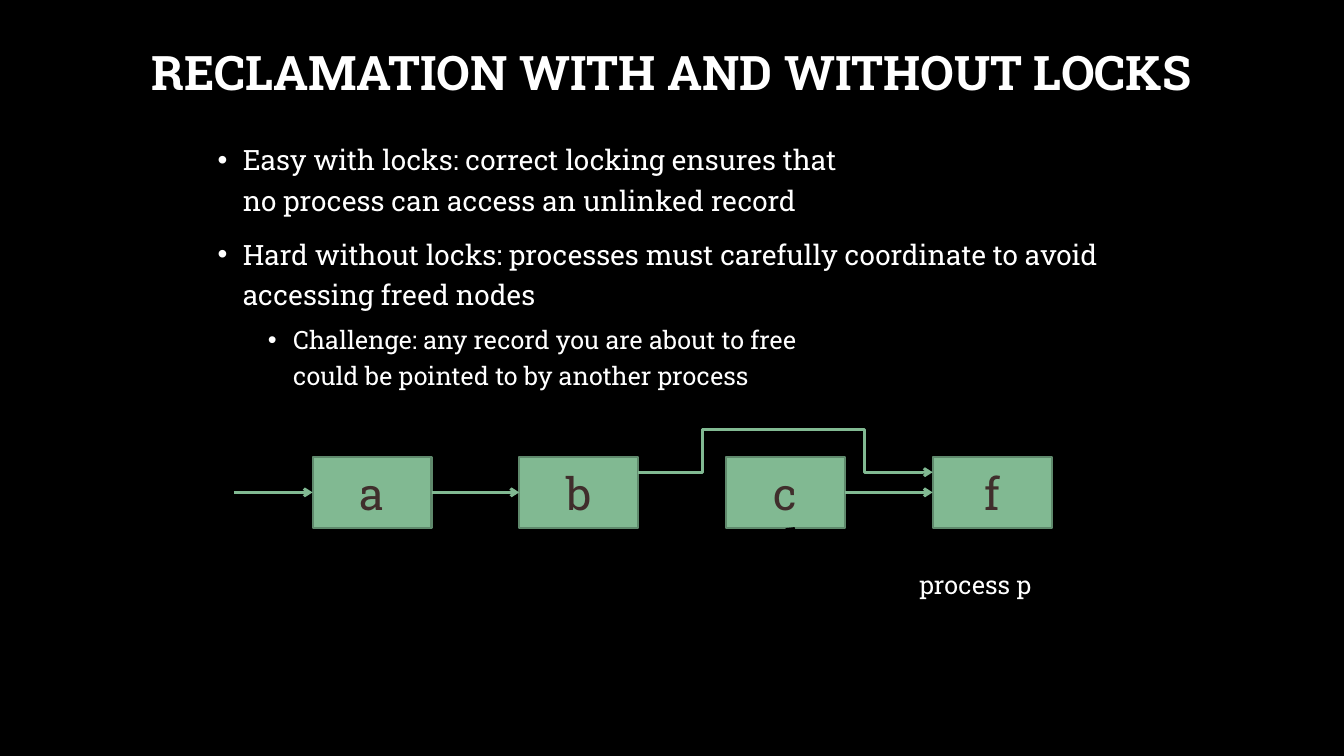
from dataclasses import dataclass

from lxml.etree import SubElement
from pptx import Presentation
from pptx.dml.color import RGBColor
from pptx.enum.shapes import MSO_CONNECTOR, MSO_SHAPE
from pptx.enum.text import MSO_ANCHOR, PP_ALIGN
from pptx.oxml.ns import qn
from pptx.util import Inches, Pt


@dataclass(frozen=True)
class Theme:
    font: str = "Roboto Slab"
    background: RGBColor = RGBColor(0x00, 0x00, 0x00)
    text: RGBColor = RGBColor(0xFF, 0xFF, 0xFF)
    node_text: RGBColor = RGBColor(0x40, 0x2E, 0x2C)
    node_fill: RGBColor = RGBColor(0x81, 0xB9, 0x92)
    node_line: RGBColor = RGBColor(0x5F, 0x89, 0x6C)
    title_size: int = 34
    node_size: int = 32
    body_size: int = 20
    small_size: int = 18


THEME = Theme()
LEFT_SITE, BOTTOM_SITE, RIGHT_SITE = 1, 2, 3

TITLE = "RECLAMATION WITH AND WITHOUT LOCKS"
# Level and wording; \v is a line break
BULLETS = [
    (0, "Easy with locks: correct locking ensures that\v"
        "no process can access an unlinked record"),
    (0, "Hard without locks: processes must carefully coordinate to avoid "
        "accessing freed nodes"),
    (1, "Challenge: any record you are about to free\v"
        "could be pointed to by another process"),
]


def set_all(target, values):
    for name, value in values.items():
        setattr(target, name, value)


def write(para, text, size, color=THEME.text, bold=False, **layout):
    para.text = text
    set_all(para, layout)
    for span in para.runs:
        set_all(span.font, {"name": THEME.font, "size": Pt(size), "bold": bold})
        span.font.color.rgb = color


def add_text(page, box, **frame_format):
    frame = page.shapes.add_textbox(*map(Inches, box)).text_frame
    set_all(frame, {"word_wrap": True, **frame_format})
    return frame


def add_bullet(para, level):
    properties = para._p.get_or_add_pPr()
    properties.set("marL", str(Inches(0.25 + 0.5 * level)))
    properties.set("indent", str(Inches(-0.25)))
    SubElement(properties, qn("a:buFont"), typeface="Arial")
    SubElement(properties, qn("a:buChar"), char="•")


def add_link(page, start, end, color=THEME.node_fill, head=True, bend=None):
    kind = MSO_CONNECTOR.ELBOW if bend else MSO_CONNECTOR.STRAIGHT
    link = page.shapes.add_connector(kind, *map(Inches, (*start, *end)))
    link.line.color.rgb = color
    link.line.width = Pt(2)
    if head:
        SubElement(link.line._get_or_add_ln(), qn("a:tailEnd"), type="arrow")
    properties = link._element.spPr
    SubElement(properties, qn("a:effectLst"))
    if bend:
        guides = properties.find(qn("a:prstGeom")).get_or_add_avLst()
        SubElement(guides, qn("a:gd"), name="adj1",
                   fmla=f"val {round(bend * 100000)}")
    return link


def add_node(page, box, name):
    node = page.shapes.add_shape(MSO_SHAPE.RECTANGLE, *map(Inches, box))
    node.shadow.inherit = False
    node.fill.solid()
    node.fill.fore_color.rgb = THEME.node_fill
    node.line.color.rgb = THEME.node_line
    node.line.width = Pt(1.5)
    node.text_frame.vertical_anchor = MSO_ANCHOR.MIDDLE
    write(node.text_frame.paragraphs[0], name, THEME.node_size,
          THEME.node_text, alignment=PP_ALIGN.CENTER)
    return node


def add_title(page, box):
    frame = add_text(page, box, vertical_anchor=MSO_ANCHOR.MIDDLE)
    write(frame.paragraphs[0], TITLE, THEME.title_size, bold=True,
          alignment=PP_ALIGN.CENTER, line_spacing=0.9)


def add_body(page, box):
    frame = add_text(page, box)
    for index, (level, text) in enumerate(BULLETS):
        para = frame.add_paragraph() if index else frame.paragraphs[0]
        write(para, text, THEME.small_size if level else THEME.body_size,
              level=level, line_spacing=1.2, space_before=Pt(5 if level else 10))
        add_bullet(para, level)


def add_linked_list(page, box):
    left, top, width, height = box
    node_width, node_height = 1.18, 0.71
    names = "abcf"
    pitch = (width - node_width) / (len(names) - 1)
    lefts = {name: left + index * pitch for index, name in enumerate(names)}
    node_top = top + height - node_height
    middle = node_top + node_height / 2

    # Nodes
    nodes = {name: add_node(page, (x, node_top, node_width, node_height), name)
             for name, x in lefts.items()}

    # Straight pointers: into a, a to b, c to f
    entry = add_link(page, (left - 0.78, middle), (left, middle))
    entry.end_connect(nodes["a"], LEFT_SITE)
    for source, target in ("ab", "cf"):
        link = add_link(page, (lefts[source] + node_width, middle),
                        (lefts[target], middle))
        link.begin_connect(nodes[source], RIGHT_SITE)
        link.end_connect(nodes[target], LEFT_SITE)

    # Pointer from b over c to f
    detour = middle - 0.2
    crest = (lefts["c"] + 0.4, top)
    add_link(page, (lefts["b"] + node_width, detour), crest, head=False, bend=0.5)
    add_link(page, crest, (lefts["f"], detour), bend=0.59)

    # Process and its reference to c, in the background colour
    label_left, label_top = lefts["f"] - 0.23, top + height + 0.36
    reference = add_link(page, (label_left, label_top + 0.24),
                         (lefts["c"] + node_width / 2, top + height),
                         THEME.background)
    reference.end_connect(nodes["c"], BOTTOM_SITE)
    label = add_text(page, (label_left, label_top, 1.33, 0.4), word_wrap=False)
    write(label.paragraphs[0], "process p", THEME.small_size)


def main():
    deck = Presentation()
    set_all(deck, {"slide_width": Inches(13.33), "slide_height": Inches(7.5)})
    page = deck.slides.add_slide(deck.slide_layouts[6])
    page.background.fill.solid()
    page.background.fill.fore_color.rgb = THEME.background
    add_title(page, (1, 0.3, 11.32, 0.89))
    add_body(page, (2.06, 1.3, 9, 5.39))
    add_linked_list(page, (3.1, 4.26, 7.33, 0.98))
    deck.save("out.pptx")


if __name__ == "__main__":
    main()
